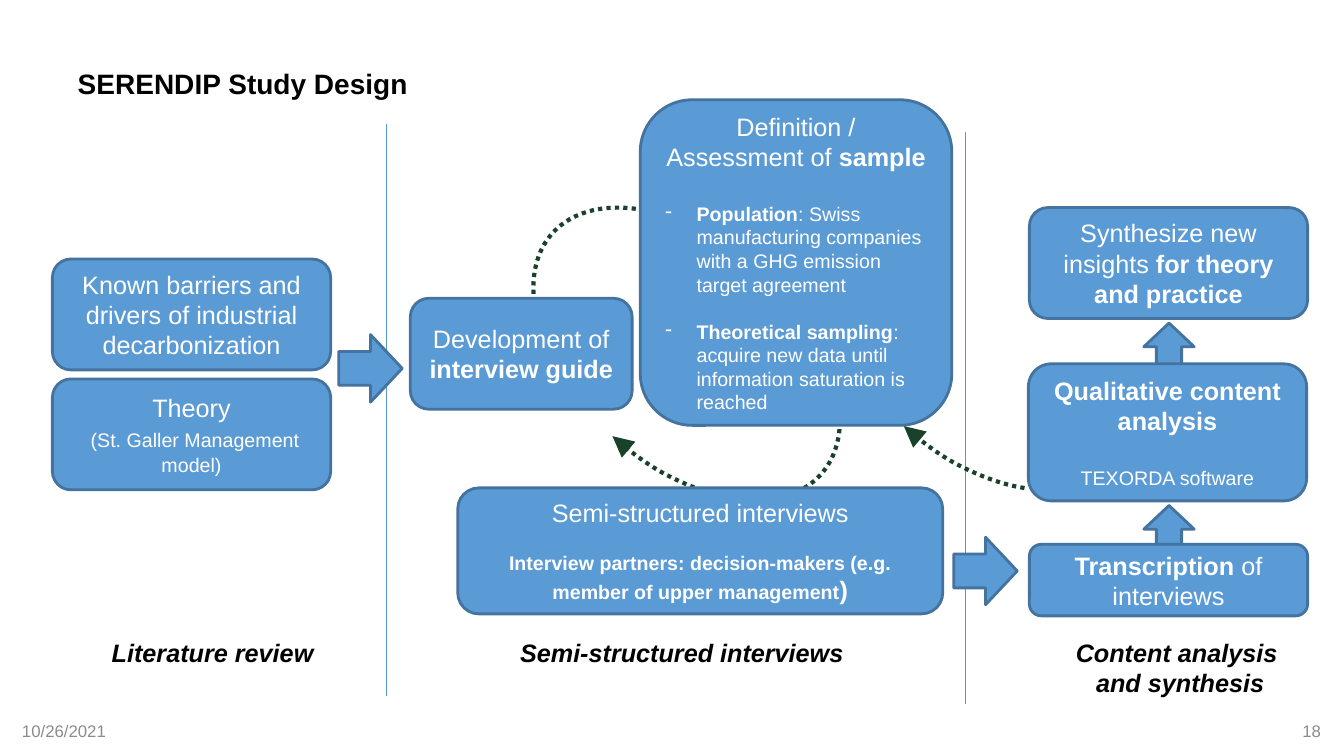
from lxml import etree
from pptx import Presentation
from pptx.dml.color import RGBColor
from pptx.enum.dml import MSO_LINE
from pptx.enum.shapes import MSO_CONNECTOR, MSO_SHAPE
from pptx.enum.text import MSO_ANCHOR, PP_ALIGN
from pptx.oxml.ns import qn
from pptx.util import Inches, Pt

ROUND = MSO_SHAPE.ROUNDED_RECTANGLE
ARROW = MSO_SHAPE.RIGHT_ARROW
ARC = MSO_SHAPE.ARC
LINE = MSO_CONNECTOR.STRAIGHT
DOTS = MSO_LINE.ROUND_DOT
LEFT, MID, RIGHT = PP_ALIGN.LEFT, PP_ALIGN.CENTER, PP_ALIGN.RIGHT
TOP, CENTER = MSO_ANCHOR.TOP, MSO_ANCHOR.MIDDLE

WHITE = RGBColor(0xFF, 0xFF, 0xFF)
BLACK = RGBColor(0, 0, 0)
GREY = RGBColor(0x8C, 0x8C, 0x8C)
BLUE = RGBColor(0x5B, 0x9B, 0xD5)
EDGE = RGBColor(0x43, 0x73, 0x9E)
RULE = RGBColor(0x56, 0x98, 0xD3)
GREEN = RGBColor(0x1A, 0x42, 0x2A)

CELL = Inches(0.1)
COL1, COL3 = 5.2, 102.1
WIDE, TALL = 27.6, 11
LABEL = 62.7
BIG, SMALL = 18, 14
INDENT = Inches(0.31)


def grid(*cells):
    return [int(n * CELL) for n in cells]


def run(text, size=BIG, bold=False, italic=False, color=WHITE):
    return text, size, bold, italic, color


def para(*runs, align=MID, gap=0, dash=False):
    return runs, align, gap, dash


def write(shape, paras, anchor=CENTER, wrap=True):
    frame = shape.text_frame
    frame.word_wrap = wrap
    frame.vertical_anchor = anchor
    for i, (runs, align, gap, dash) in enumerate(paras):
        p = frame.add_paragraph() if i else frame.paragraphs[0]
        if dash:
            props = p._p.get_or_add_pPr()
            props.set("marL", str(INDENT))
            props.set("indent", str(-INDENT))
            etree.SubElement(props, qn("a:buChar")).set("char", "-")
        p.alignment = align
        if gap:
            p.space_before = Pt(gap)
        for text, size, bold, italic, color in runs:
            r = p.add_run()
            r.text = text
            font = r.font
            font.name = "Arial"
            font.size = Pt(size)
            font.bold = bold
            font.italic = italic
            font.color.rgb = color


def block(slide, kind, cells, turn=0):
    shape = slide.shapes.add_shape(kind, *grid(*cells))
    shape.shadow.inherit = False
    shape.rotation = turn
    shape.fill.solid()
    shape.fill.fore_color.rgb = BLUE
    shape.line.color.rgb = EDGE
    shape.line.width = Pt(2)
    return shape


def card(slide, cells, *paras):
    write(block(slide, ROUND, cells), paras)


def loop(slide, x, y, angle):
    arc = slide.shapes.add_shape(ARC, *grid(x, y, 22, 35.8))
    arc.shadow.inherit = False
    arc.rotation = 132
    arc.adjustments[0] = angle * 0.6
    arc.adjustments[1] = 0
    arc.fill.background()
    arc.line.color.rgb = GREEN
    arc.line.width = Pt(3)
    arc.line.dash_style = DOTS
    tip = etree.SubElement(arc.line._get_or_add_ln(), qn("a:tailEnd"))
    tip.set("type", "triangle")
    tip.set("w", "lg")
    tip.set("len", "lg")


def rule(slide, x, y):
    x, top, end = grid(x, y, y + 56.7)
    line = slide.shapes.add_connector(LINE, x, top, x, end)
    line.line.color.rgb = RULE
    line.line.width = Pt(0.75)
    etree.SubElement(line._element.spPr, qn("a:effectLst"))


def label(slide, x, width, height, *lines, align=LEFT):
    box = slide.shapes.add_textbox(*grid(x, LABEL, width, height))
    paras = [para(run(t, BIG, True, True, BLACK), align=align) for t in lines]
    write(box, paras, TOP, False)


def foot(slide, x, text, align):
    box = slide.shapes.add_textbox(*grid(x, 70.5, 30, 4))
    write(box, [para(run(text, 12, color=GREY), align=align)])


def main():
    deck = Presentation()
    deck.slide_width, deck.slide_height = Inches(13.33), Inches(7.5)
    slide = deck.slides.add_slide(deck.slide_layouts[5])

    for y in (50, 31.9):
        block(slide, ARROW, (113.6, y, 4.7, 5), 270)
    loop(slide, 57.1, 17.2, 69.37)

    title = slide.shapes.title
    title.left, title.top, title.width, title.height = grid(6.7, 2, 102.5, 12.5)
    write(title, [para(run("SERENDIP Study Design", 20, True, color=BLACK), align=LEFT)])
    foot(slide, 1.2, "10/26/2021", LEFT)
    foot(slide, 102, "18", RIGHT)

    card(slide, (COL1, 25.7, WIDE, TALL),
         para(run("Known barriers and drivers of industrial decarbonization")))
    card(slide, (COL1, 37.6, WIDE, TALL),
         para(run("Theory")),
         para(run(" "), run("(St. Galler Management model)", SMALL)))
    label(slide, 10.1, 22.2, 4, "Literature review")
    rule(slide, 38.3, 12.3)

    card(slide, (40.7, 29.6, 22, TALL),
         para(run("Development of "), run("interview guide", bold=True)))
    label(slide, 50.6, 34.4, 4, "Semi-structured interviews")
    label(slide, 105.6, 22.9, 7.1, "Content analysis ", "and synthesis", align=MID)
    rule(slide, 95.8, 13.1)

    card(slide, (63.5, 9.9, 30.9, 32.3),
         para(run("Definition / Assessment of "), run("sample", bold=True)),
         para(run("Population", SMALL, True),
              run(": Swiss manufacturing companies with a GHG emission target agreement", SMALL),
              align=LEFT, gap=21.5, dash=True),
         para(run("Theoretical sampling", SMALL, True),
              run(": acquire new data until information saturation is reached", SMALL),
              align=LEFT, gap=17, dash=True))
    block(slide, ARROW, (33.6, 33.2, 6.3, 6.7))
    card(slide, (45.4, 48.4, 48.1, 12.5),
         para(run("Semi-structured interviews")),
         para(run("Interview partners: decision-makers (e.g. member of upper management", SMALL, True),
              run(")", bold=True), gap=17))
    block(slide, ARROW, (94.6, 53.3, 6.3, 6.7))

    card(slide, (COL3, 54, WIDE, 7.1),
         para(run("Transcription ", bold=True), run("of interviews")))
    card(slide, (COL3 - 0.1, 36.1, WIDE, 13.6),
         para(run("Qualitative content analysis", bold=True)),
         para(run("TEXORDA software", SMALL), gap=21.5))
    loop(slide, 86, 16.2, 300.16)
    card(slide, (COL3, 20.6, WIDE, TALL),
         para(run("Synthesize new insights "), run("for theory and practice", bold=True)))

    deck.save("out.pptx")


if __name__ == "__main__":
    main()
